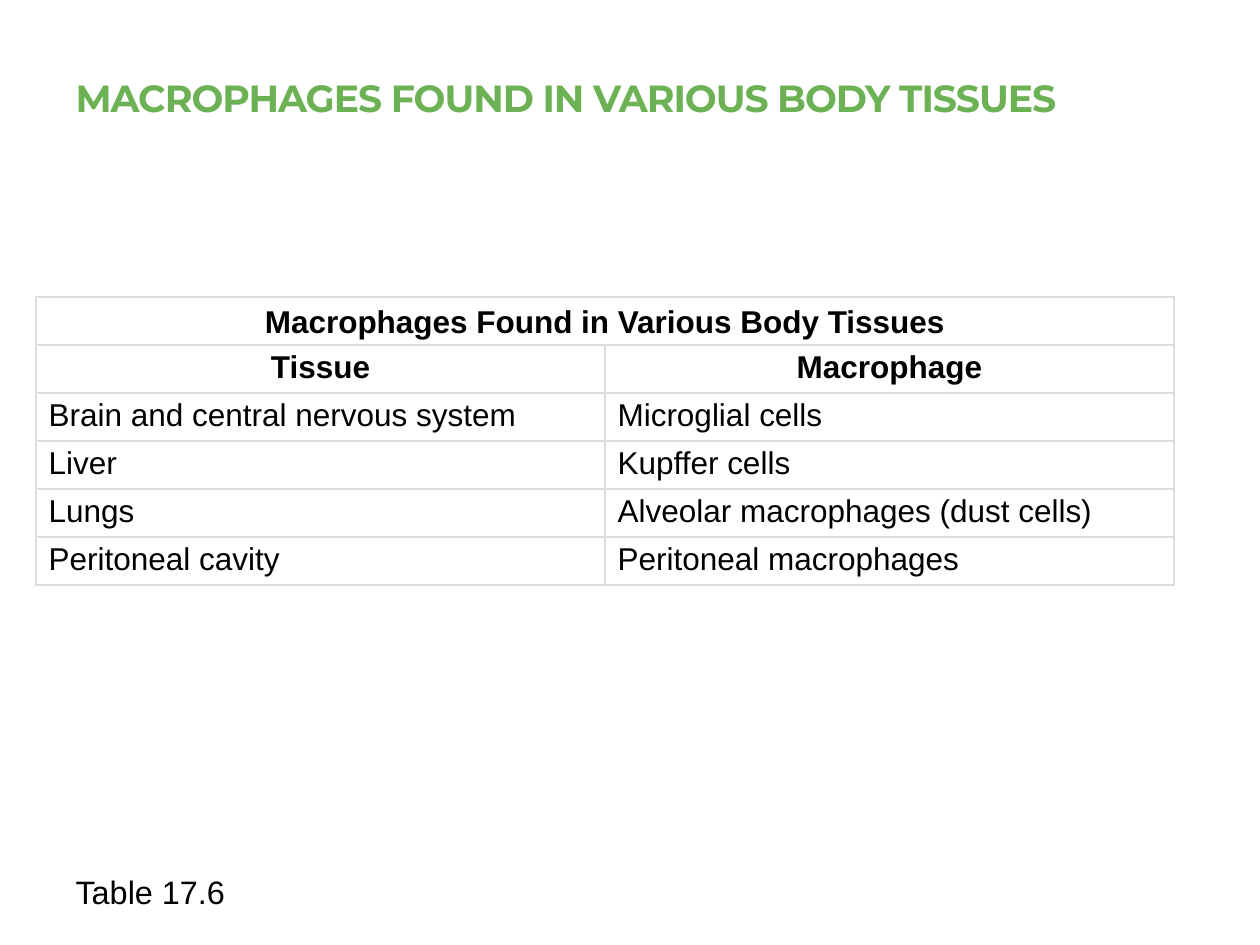
from lxml.etree import SubElement
from pptx import Presentation
from pptx.dml.color import RGBColor
from pptx.enum.text import MSO_ANCHOR as Anchor, MSO_AUTO_SIZE as AutoSize, PP_ALIGN as Align
from pptx.oxml.ns import qn
from pptx.util import Emu, Pt

EMU_PER_PX = 914400 / 126


def px(length):
    return Emu(round(length * EMU_PER_PX))


def write(frame, text, align, color, **font_values):
    """Put one formatted paragraph into a text frame and return its run."""
    para = frame.paragraphs[0]
    para.alignment = align
    para.space_before = Pt(0)
    span = para.add_run()
    span.text = text
    for name, value in font_values.items():
        setattr(span.font, name, value)
    span.font.color.rgb = RGBColor.from_string(color)
    return span


deck = Presentation()
deck.slide_width, deck.slide_height = px(1260), px(945)
page = deck.slides.add_slide(deck.slide_layouts[1])
title, caption = page.shapes.title, page.placeholders[1]

# Title and caption
for box, top, height, anchor in [(title, 33, 91, Anchor.BOTTOM), (caption, 866, 47, Anchor.TOP)]:
    box.left, box.top, box.width, box.height = px(63), px(top), px(1111), px(height)
    frame_format = {"word_wrap": True, "auto_size": AutoSize.NONE, "vertical_anchor": anchor}
    for name, value in frame_format.items():
        setattr(box.text_frame, name, value)

title.text_frame.margin_bottom = px(4)
heading = write(title.text_frame, "MACROPHAGES FOUND IN VARIOUS BODY TISSUES", Align.LEFT,
                "6CB255", name="Montserrat", size=Pt(21.6), bold=True)
heading.font._element.set("spc", "-60")

bullet_off = caption.text_frame.paragraphs[0]._p.get_or_add_pPr()
bullet_off.set("marL", "0")
bullet_off.set("indent", "0")
SubElement(bullet_off, qn("a:buNone"))
write(caption.text_frame, "Table 17.6", Align.LEFT, "000000", name="Arial", size=Pt(18.5))

# Table of tissues and their macrophages
rows = [
    ("Macrophages Found in Various Body Tissues", ""),
    ("Tissue", "Macrophage"),
    ("Brain and central nervous system", "Microglial cells"),
    ("Liver", "Kupffer cells"),
    ("Lungs", "Alveolar macrophages (dust cells)"),
    ("Peritoneal cavity", "Peritoneal macrophages"),
]
header_rows = 2
row_height = 48
table = page.shapes.add_table(len(rows), 2, px(36), px(297), px(1138),
                              px(row_height * len(rows))).table
table.first_row = table.horz_banding = False
table.cell(0, 0).merge(table.cell(0, 1))

for row_index, texts in enumerate(rows):
    table.rows[row_index].height = px(row_height)
    is_header = row_index < header_rows
    for column_index, text in enumerate(texts):
        cell = table.cell(row_index, column_index)
        cell.margin_top = cell.margin_bottom = px(5)
        cell.vertical_anchor = Anchor.BOTTOM if row_index == 0 else Anchor.TOP
        for side in ("a:lnL", "a:lnR", "a:lnT", "a:lnB"):
            border = SubElement(cell._tc.get_or_add_tcPr(), qn(side), w=str(Pt(1)))
            border_fill = SubElement(border, qn("a:solidFill"))
            SubElement(border_fill, qn("a:srgbClr"), val="DDDDDD")
        cell.fill.solid()
        cell.fill.fore_color.rgb = RGBColor.from_string("FFFFFF")
        if text:
            write(cell.text_frame, text, Align.CENTER if is_header else Align.LEFT,
                  "000000", name="Arial", size=Pt(18), bold=is_header)

deck.save("out.pptx")
